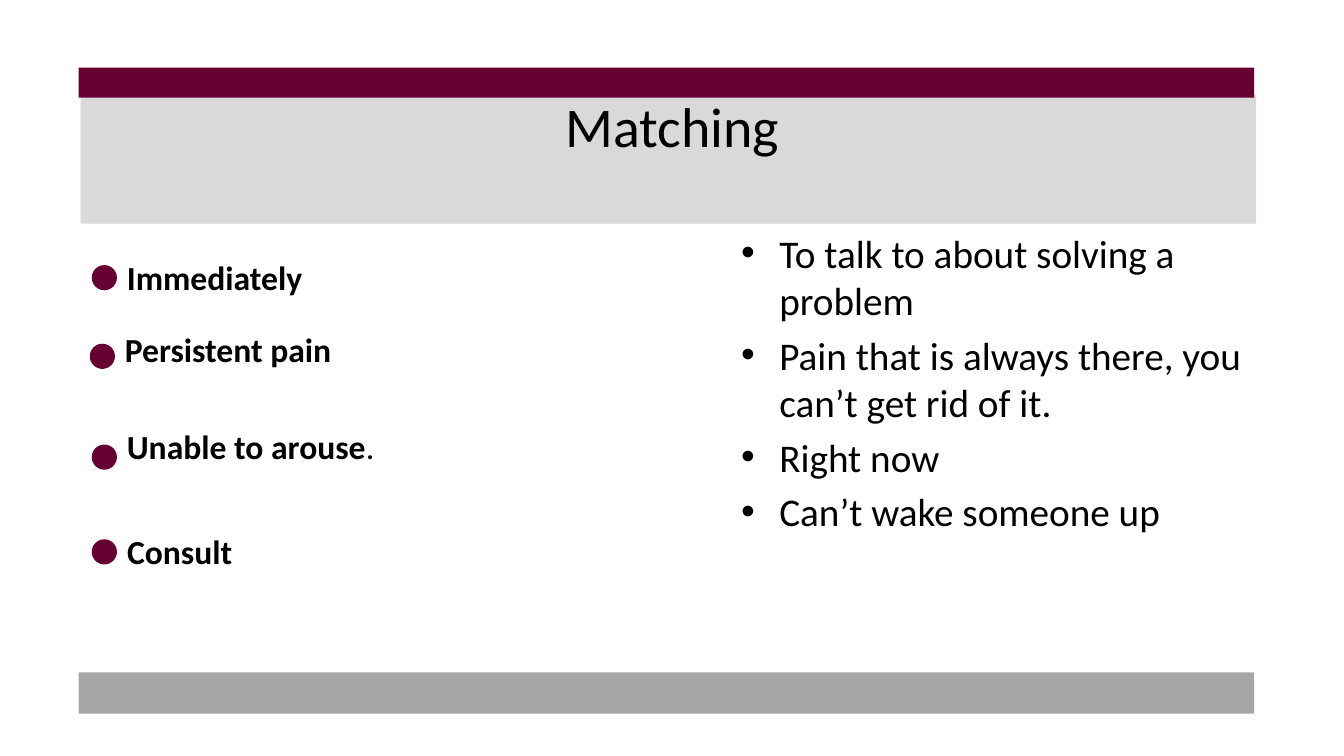
from dataclasses import dataclass
from typing import NamedTuple

from lxml.etree import SubElement
from pptx import Presentation
from pptx.dml.color import RGBColor
from pptx.enum.shapes import MSO_SHAPE as Shape
from pptx.enum.text import MSO_ANCHOR as Anchor, MSO_AUTO_SIZE as AutoSize, PP_ALIGN as Align
from pptx.oxml.ns import qn
from pptx.util import Inches, Pt


@dataclass(frozen=True)
class Theme:
    font: str = "Calibri"
    ink: str = "000000"
    maroon: str = "660033"
    pale_grey: str = "D9D9D9"
    grey: str = "A6A6A6"
    title_size: int = 40
    term_size: int = 24
    meaning_size: int = 28


class Box(NamedTuple):
    left: float
    top: float
    width: float
    height: float


class Band(NamedTuple):
    box: Box
    color: str


class Term(NamedTuple):
    text: str
    box: Box
    dot_left: float
    dot_top: float
    plain_ending: str = ""


THEME = Theme()
DOT_SIZE = 0.25
HANGING = 0.38

BANDS = [
    Band(Box(0.8, 0.94, 11.66, 1.28), THEME.pale_grey),
    Band(Box(0.78, 6.67, 11.66, 0.41), THEME.grey),
    Band(Box(0.78, 0.67, 11.66, 0.3), THEME.maroon),
]
TERMS = [
    Term("Immediately", Box(1.16, 2.5, 11.66, 0.5), 0.91, 2.63),
    Term("Persistent pain", Box(1.14, 3.21, 5.94, 0.5), 0.89, 3.41),
    Term("Unable to arouse", Box(1.16, 4.18, 11.17, 0.5), 0.91, 4.41, "."),
]
LAST_TERM = Term("Consult", Box(1.16, 5.22, 5.39, 1.48), 0.91, 5.35)
MEANINGS = [
    "To talk to about solving a problem",
    "Pain that is always there, you can’t get rid of it.",
    "Right now",
    "Can’t wake someone up",
]


def place(shape, box: Box) -> None:
    shape.left, shape.top, shape.width, shape.height = map(Inches, box)


def style_runs(paragraph, size: int, bold: bool = False) -> None:
    for run in paragraph.runs:
        run.font.name = THEME.font
        run.font.size = Pt(size)
        run.font.bold = bold
        run.font.color.rgb = RGBColor.from_string(THEME.ink)


def set_bullet(paragraph, symbol: str = "") -> None:
    properties = paragraph._p.get_or_add_pPr()
    indent = Inches(HANGING) if symbol else 0
    properties.set("marL", str(indent))
    properties.set("indent", str(-indent))
    if symbol:
        SubElement(properties, qn("a:buChar")).set("char", symbol)
    else:
        SubElement(properties, qn("a:buNone"))


def add_filled(slide, kind: Shape, box: Box, color: str):
    filled = slide.shapes.add_shape(kind, *map(Inches, box))
    filled.shadow.inherit = False
    filled.fill.solid()
    filled.fill.fore_color.rgb = RGBColor.from_string(color)
    filled.line.fill.background()
    return filled


def add_dot(slide, term: Term) -> None:
    dot = Box(term.dot_left, term.dot_top, DOT_SIZE, DOT_SIZE)
    add_filled(slide, Shape.OVAL, dot, THEME.maroon)


def add_term(slide, term: Term) -> None:
    frame = slide.shapes.add_textbox(*map(Inches, term.box)).text_frame
    frame.word_wrap = True
    frame.auto_size = AutoSize.SHAPE_TO_FIT_TEXT
    frame.text = term.text
    paragraph = frame.paragraphs[0]
    style_runs(paragraph, THEME.term_size, bold=True)
    if term.plain_ending:
        ending = paragraph.add_run()
        ending.text = term.plain_ending
        style_runs(paragraph, THEME.term_size, bold=True)
        ending.font.bold = False


def main() -> None:
    deck = Presentation()
    deck.slide_width, deck.slide_height = Inches(13.33), Inches(7.5)
    slide = deck.slides.add_slide(deck.slide_layouts[3])
    title, last_term, meanings = slide.placeholders

    # Coloured bands, behind the title
    for band in BANDS:
        strip = add_filled(slide, Shape.RECTANGLE, band.box, band.color)
        title.element.addprevious(strip.element)

    # Title
    place(title, Box(0.67, 0.3, 12, 1.89))
    title.text_frame.text = "Matching"
    title.text_frame.auto_size = AutoSize.NONE
    title.text_frame.vertical_anchor = Anchor.MIDDLE
    title.text_frame.paragraphs[0].alignment = Align.CENTER
    style_runs(title.text_frame.paragraphs[0], THEME.title_size)

    # Terms on the left, the last one in the body placeholder
    place(last_term, LAST_TERM.box)
    last_term.text_frame.text = LAST_TERM.text
    last_term.text_frame.auto_size = AutoSize.NONE
    set_bullet(last_term.text_frame.paragraphs[0])
    style_runs(last_term.text_frame.paragraphs[0], THEME.term_size, bold=True)
    for term in TERMS:
        add_term(slide, term)
    for term in [*TERMS, LAST_TERM]:
        add_dot(slide, term)

    # Meanings on the right
    place(meanings, Box(7.25, 2.22, 5.42, 4.48))
    meanings.text_frame.text = "\n".join(MEANINGS)
    meanings.text_frame.auto_size = AutoSize.NONE
    for paragraph in meanings.text_frame.paragraphs:
        set_bullet(paragraph, "•")
        style_runs(paragraph, THEME.meaning_size)

    deck.save("out.pptx")


if __name__ == "__main__":
    main()
